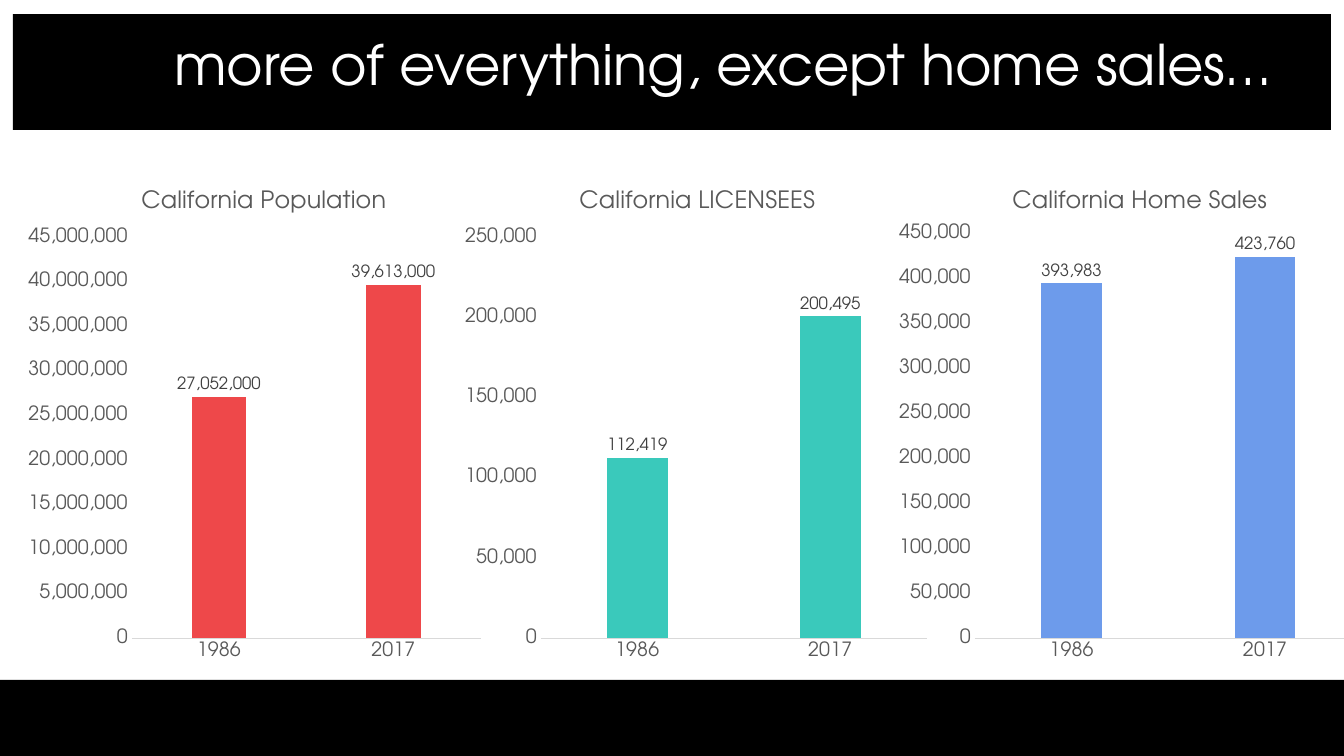
from dataclasses import dataclass

from lxml import etree
from pptx import Presentation
from pptx import util as u
from pptx.chart.data import CategoryChartData
from pptx.dml.color import RGBColor
from pptx.enum import chart as ch, shapes, text
from pptx.oxml import ns

PX = 9071  # EMU in one px, at 100.8 px to the inch


@dataclass(frozen=True)
class Theme:
    face: str = "TeX Gyre Adventor"
    band: str = "000000"
    heading: str = "FFFFFF"
    axis: str = "595959"
    label: str = "404040"
    rule: str = "D9D9D9"
    red: str = "EE484A"
    teal: str = "3AC9BB"
    blue: str = "6D9BEB"
    heading_size: int = 40
    chart_title_size: int = 17
    axis_size: int = 14
    label_size: int = 12


THEME = Theme()
YEARS = ("1986", "2017")

# heading, frame, plot area, heading left, colour, values, axis top, axis step
CHARTS = (
    ("California Population", (19, 168, 472, 504), (132, 237, 349, 401), 137,
     THEME.red, (27052000, 39613000), 45000000, 5000000),
    ("California LICENSEES", (455, 168, 482, 504), (541, 237, 386, 401), 575,
     THEME.teal, (112419, 200495), 250000, 50000),
    ("California Home Sales", (890, 168, 482, 504), (975, 233, 387, 405), 1008,
     THEME.blue, (393983, 423760), 450000, 50000),
)


def px(*lengths):
    return [u.Emu(length * PX) for length in lengths]


def set_all(target, values):
    for name, value in values.items():
        setattr(target, name, value)


def set_font(font, size, color):
    set_all(font, {"name": THEME.face, "size": u.Pt(size), "bold": False})
    font.color.rgb = RGBColor.from_string(color)


def add_band(slide, *frame):
    band = slide.shapes.add_shape(shapes.MSO_SHAPE.RECTANGLE, *px(*frame))
    band.shadow.inherit = False
    band.fill.solid()
    band.fill.fore_color.rgb = RGBColor.from_string(THEME.band)
    band.line.fill.background()


def place_title(slide, words, *frame):
    title = slide.shapes.title
    # Bring the title in front of the band
    slide.shapes._spTree.append(title._element)
    set_all(title, dict(zip(("left", "top", "width", "height"), px(*frame))))
    box = title.text_frame
    set_all(box, {"text": words, "word_wrap": True,
                  "auto_size": text.MSO_AUTO_SIZE.NONE,
                  "vertical_anchor": text.MSO_ANCHOR.MIDDLE})
    para = box.paragraphs[0]
    set_all(para, {"alignment": text.PP_ALIGN.LEFT, "line_spacing": 0.9})
    set_font(para.runs[0].font, THEME.heading_size, THEME.heading)


def set_layout(parent, position, values):
    """Fix the place of a chart part, in fractions of the chart frame."""
    for old in parent.findall(ns.qn("c:layout")):
        parent.remove(old)
    layout = etree.Element(ns.qn("c:layout"))
    manual = etree.SubElement(layout, ns.qn("c:manualLayout"))
    for name, value in values.items():
        etree.SubElement(manual, ns.qn(f"c:{name}")).set("val", str(value))
    parent.insert(position, layout)


def style_axes(chart, top, step):
    years, amounts = chart.category_axis, chart.value_axis
    for axis in (years, amounts):
        set_all(axis, {"has_major_gridlines": False,
                       "major_tick_mark": ch.XL_TICK_MARK.NONE,
                       "minor_tick_mark": ch.XL_TICK_MARK.NONE})
        set_font(axis.tick_labels.font, THEME.axis_size, THEME.axis)
    years.format.line.color.rgb = RGBColor.from_string(THEME.rule)
    years.format.line.width = u.Pt(0.75)
    amounts.format.line.fill.background()
    set_all(amounts, {"minimum_scale": 0, "maximum_scale": top,
                      "major_unit": step})
    set_all(amounts.tick_labels, {"number_format": "#,##0",
                                  "number_format_is_linked": False})


def style_columns(chart, color):
    plot = chart.plots[0]
    set_all(plot, {"gap_width": 219, "overlap": -27,
                   "vary_by_categories": False})
    series = plot.series[0]
    series.format.fill.solid()
    series.format.fill.fore_color.rgb = RGBColor.from_string(color)
    labels = series.data_labels
    set_all(labels, {"show_value": True, "number_format": "#,##0",
                     "number_format_is_linked": False,
                     "position": ch.XL_LABEL_POSITION.OUTSIDE_END})
    set_font(labels.font, THEME.label_size, THEME.label)


def add_column_chart(slide, heading, frame, area, heading_left, color,
                     values, top, step):
    data = CategoryChartData(number_format="#,##0")
    data.categories = YEARS
    data.add_series("Series 1", values)
    chart = slide.shapes.add_chart(
        ch.XL_CHART_TYPE.COLUMN_CLUSTERED, *px(*frame), data).chart
    chart.has_legend = False
    set_font(chart.font, THEME.axis_size, THEME.band)
    style_axes(chart, top, step)
    style_columns(chart, color)

    # Heading above the columns
    chart.has_title = True
    title = chart.chart_title
    title.include_in_layout = False
    title.text_frame.text = heading
    span = title.text_frame.paragraphs[0].runs[0]
    set_font(span.font, THEME.chart_title_size, THEME.axis)

    # Places of heading and plot area
    left, upper, width, height = frame
    set_layout(title._element, 1, {
        "xMode": "edge", "yMode": "edge",
        "x": round((heading_left - left) / width, 3), "y": 0.03})
    set_layout(chart._chartSpace.chart.plotArea, 0, {
        "layoutTarget": "inner", "xMode": "edge", "yMode": "edge",
        "x": round((area[0] - left) / width, 3),
        "y": round((area[1] - upper) / height, 3),
        "w": round(area[2] / width, 3),
        "h": round(area[3] / height, 3)})


def main():
    deck = Presentation()
    deck.slide_width, deck.slide_height = px(1344, 756)
    slide = deck.slides.add_slide(deck.slide_layouts[5])

    # Black bands at foot and head
    add_band(slide, 0, 680, 1344, 76)
    add_band(slide, 13, 14, 1318, 116)
    place_title(slide, "more of everything, except home sales…",
                164, 33, 1168, 68)

    # Three column charts side by side
    for column_chart in CHARTS:
        add_column_chart(slide, *column_chart)
    deck.save("out.pptx")


if __name__ == "__main__":
    main()
